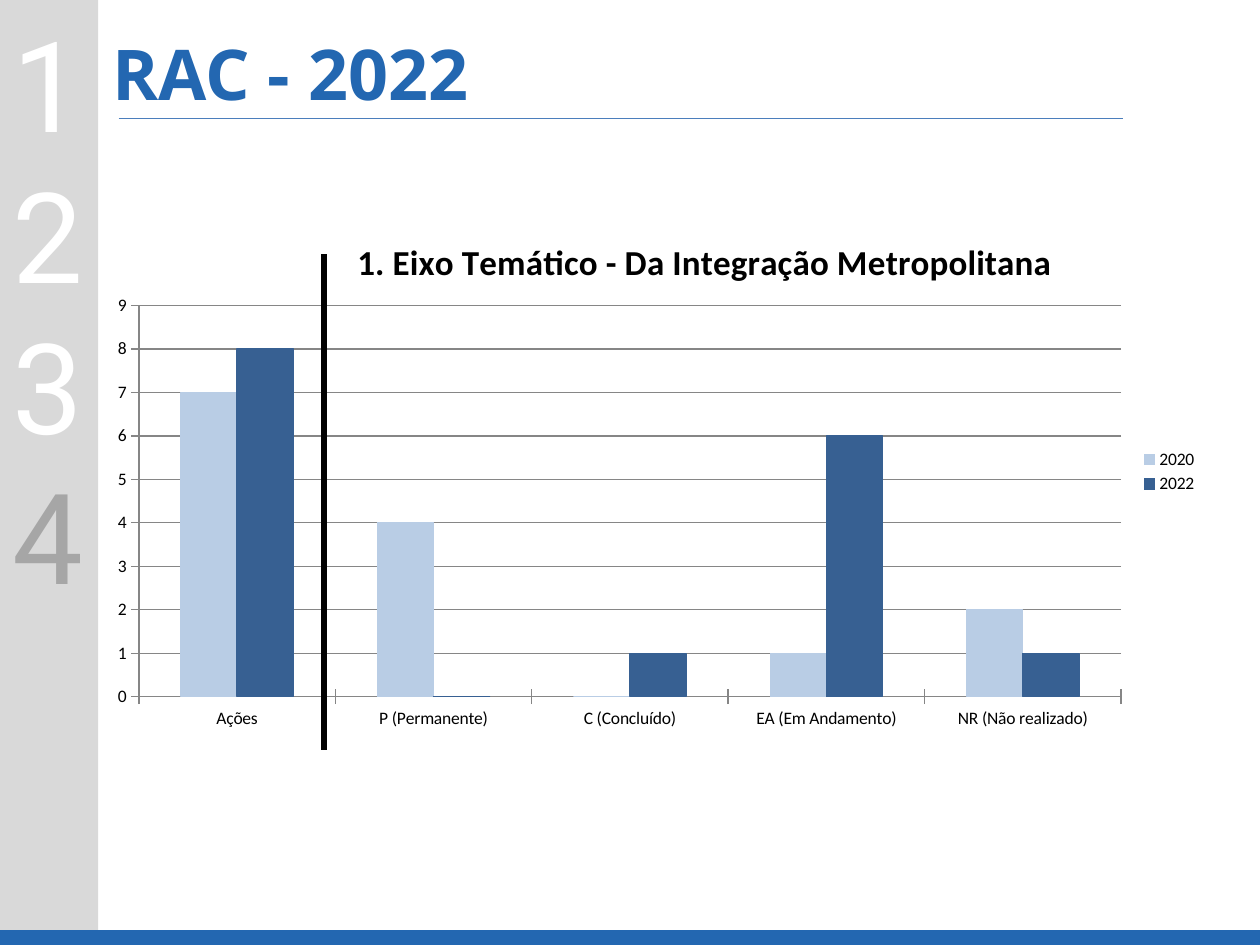
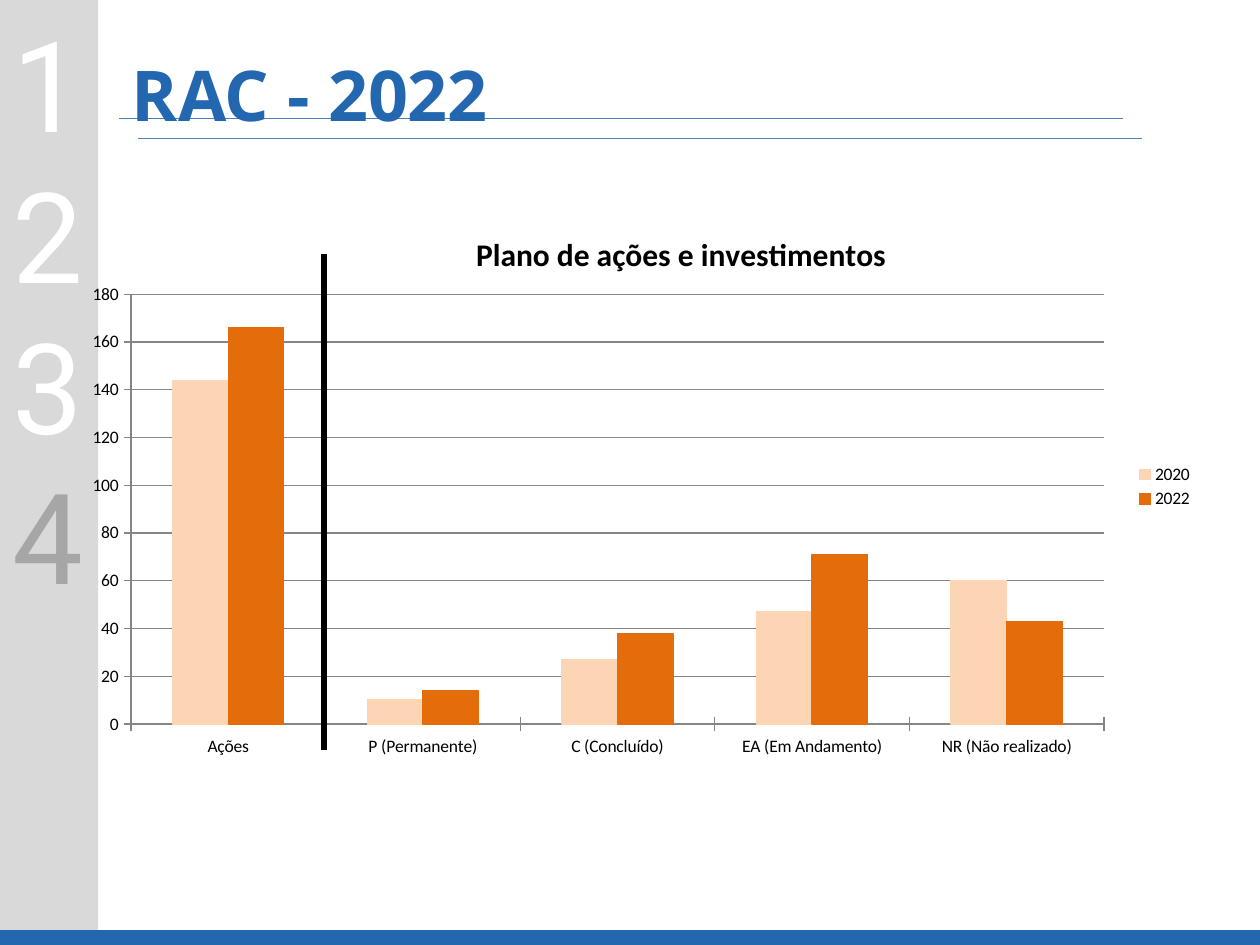
from dataclasses import dataclass

from lxml import etree
from pptx import Presentation
from pptx.chart.data import CategoryChartData
from pptx.dml.color import RGBColor
from pptx.enum.chart import XL_CHART_TYPE, XL_LEGEND_POSITION, XL_TICK_MARK
from pptx.enum.shapes import MSO_CONNECTOR, MSO_SHAPE
from pptx.enum.text import MSO_ANCHOR
from pptx.oxml.ns import qn
from pptx.util import Cm, Pt

COLUMNS = XL_CHART_TYPE.COLUMN_CLUSTERED
LEGEND_RIGHT = XL_LEGEND_POSITION.RIGHT
TICK_CROSS = XL_TICK_MARK.CROSS
STRAIGHT = MSO_CONNECTOR.STRAIGHT
RECTANGLE = MSO_SHAPE.RECTANGLE
MIDDLE, TOP = MSO_ANCHOR.MIDDLE, MSO_ANCHOR.TOP

# Content; places and sizes are in cm, layouts are fractions of the chart
HEADING = "RAC - 2022"
SECTIONS = ["1", "2", "3", "4"]
CURRENT_SECTION = "4"
STATUSES = ["Ações", "P (Permanente)", "C (Concluído)",
            "EA (Em Andamento)", "NR (Não realizado)"]
REPORTS = [
    {
        "title": "1. Eixo Temático - Da Integração Metropolitana",
        "title_size": 20,
        "years": [("2020", [7, 4, 0, 1, 2], "B9CDE5"),
                  ("2022", [8, 0, 1, 6, 1], "376092")],
        "top_value": 9, "step": 1,
        "place": (1.9, 4.11, 22.5, 10.8),
        "title_layout": {"x": 0.23, "y": 0.05},
        "plot_layout": {"x": 0.04, "y": 0.19, "w": 0.88, "h": 0.73},
        "heading_at": (2.11, 0.41),
        "extra_rule": None,
    },
    {
        "title": "Plano de ações e investimentos",
        "title_size": 18,
        "years": [("2020", [144, 10, 27, 47, 60], "FCD5B5"),
                  ("2022", [166, 14, 38, 71, 43], "E46C0A")],
        "top_value": 180, "step": 20,
        "place": (1.5, 4.11, 22.81, 11.4),
        "title_layout": {"x": 0.35, "y": 0.04},
        "plot_layout": {"x": 0.05, "y": 0.16, "w": 0.86, "h": 0.76},
        "heading_at": (2.51, 0.84),
        "extra_rule": (2.79, 2.8),
    },
]


@dataclass(frozen=True)
class Theme:
    blue: str = "2367B1"
    rule: str = "4B7EBC"
    sidebar: str = "D9D9D9"
    number: str = "FFFFFF"
    current: str = "A6A6A6"
    ink: str = "000000"
    grid: str = "868686"
    heading_font: str = "Open Sans"
    number_font: str = "Roboto"
    chart_font: str = "Calibri"
    heading_size: int = 40
    number_size: int = 72
    chart_size: int = 10
    thin: float = 0.75
    thick: float = 3


THEME = Theme()
SLIDE_W, SLIDE_H = 25.4, 19.05
FOOTER_H = 0.3
SIDEBAR_W = 1.98
NUMBER_W, NUMBER_H, NUMBER_STEP = 1.9, 3.33, 3.04
HEADING_W, HEADING_H = 20.6, 2.11
RULE_W, RULE_AT = 20.24, (2.39, 2.39)
DIVIDER_X, DIVIDER_TOP, DIVIDER_BOTTOM = 6.53, 5.13, 15.11


def rgb(code):
    return RGBColor.from_string(code)


def add_band(slide, left, top, width, height, color):
    band = slide.shapes.add_shape(RECTANGLE, Cm(left), Cm(top), Cm(width), Cm(height))
    band.shadow.inherit = False
    band.fill.solid()
    band.fill.fore_color.rgb = rgb(color)
    band.line.fill.background()


def add_line(slide, x1, y1, x2, y2, color, weight):
    line = slide.shapes.add_connector(STRAIGHT, Cm(x1), Cm(y1), Cm(x2), Cm(y2))
    line.line.color.rgb = rgb(color)
    line.line.width = Pt(weight)
    etree.SubElement(line.element.spPr, qn("a:effectLst"))


def add_rule(slide, left, top):
    add_line(slide, left, top, left + RULE_W, top, THEME.rule, THEME.thin)


def add_text(slide, text, place, font, size, color, bold=False,
             insets=(0.25, 0.13), anchor=TOP):
    box = slide.shapes.add_textbox(*map(Cm, place))
    frame = box.text_frame
    frame.word_wrap = True
    frame.vertical_anchor = anchor
    frame.margin_left = frame.margin_right = Cm(insets[0])
    frame.margin_top = frame.margin_bottom = Cm(insets[1])
    run = frame.paragraphs[0].add_run()
    run.text = text
    run.font.name = font
    run.font.size = Pt(size)
    run.font.bold = bold
    run.font.color.rgb = rgb(color)


def add_frame(slide):
    """Sidebar with section numbers, footer band and heading rule."""
    add_band(slide, 0, 0, SIDEBAR_W, SLIDE_H - FOOTER_H, THEME.sidebar)
    for i, section in enumerate(SECTIONS):
        color = THEME.current if section == CURRENT_SECTION else THEME.number
        add_text(slide, section, (0, i * NUMBER_STEP, NUMBER_W, NUMBER_H),
                 THEME.number_font, THEME.number_size, color)
    add_band(slide, 0, SLIDE_H - FOOTER_H, SLIDE_W, FOOTER_H, THEME.blue)
    add_rule(slide, *RULE_AT)


def set_layout(element, index, fractions, inner=False):
    """Place a chart part by fractions of the chart's size."""
    for old in element.findall(qn("c:layout")):
        element.remove(old)
    layout = etree.Element(qn("c:layout"))
    manual = etree.SubElement(layout, qn("c:manualLayout"))
    if inner:
        etree.SubElement(manual, qn("c:layoutTarget")).set("val", "inner")
    for axis in "xy":
        etree.SubElement(manual, qn(f"c:{axis}Mode")).set("val", "edge")
    for key, value in fractions.items():
        etree.SubElement(manual, qn(f"c:{key}")).set("val", str(value))
    element.insert(index, layout)


def style_line(line, color):
    line.color.rgb = rgb(color)
    line.width = Pt(THEME.thin)


def add_report_chart(slide, report):
    data = CategoryChartData()
    data.categories = STATUSES
    for year, counts, _ in report["years"]:
        data.add_series(year, counts)
    chart = slide.shapes.add_chart(COLUMNS, *map(Cm, report["place"]), data).chart
    chart.font.name = THEME.chart_font
    chart.font.size = Pt(THEME.chart_size)
    chart.font.color.rgb = rgb(THEME.ink)

    # Title and legend
    title = chart.chart_title
    run = title.text_frame.paragraphs[0].add_run()
    run.text = report["title"]
    run.font.name = THEME.chart_font
    run.font.size = Pt(report["title_size"])
    run.font.bold = True
    run.font.color.rgb = rgb(THEME.ink)
    chart.has_legend = True
    chart.legend.position = LEGEND_RIGHT
    chart.legend.include_in_layout = False

    # Columns
    plot = chart.plots[0]
    plot.vary_by_categories = False
    plot.gap_width = 150
    plot.overlap = 0
    for columns, (_, _, color) in zip(plot.series, report["years"]):
        columns.format.fill.solid()
        columns.format.fill.fore_color.rgb = rgb(color)
        style_line(columns.format.line, color)

    # Axes
    counts_axis = chart.value_axis
    counts_axis.minimum_scale = 0
    counts_axis.maximum_scale = report["top_value"]
    counts_axis.major_unit = report["step"]
    counts_axis.has_major_gridlines = True
    style_line(counts_axis.major_gridlines.format.line, THEME.grid)
    for axis in (chart.category_axis, counts_axis):
        axis.major_tick_mark = TICK_CROSS
        style_line(axis.format.line, THEME.grid)

    set_layout(title.element if hasattr(title, "element") else title._element,
               1, report["title_layout"])
    plot_area = chart.element.find(f"{qn('c:chart')}/{qn('c:plotArea')}")
    set_layout(plot_area, 0, report["plot_layout"], inner=True)


def add_report(deck, report):
    slide = deck.slides.add_slide(deck.slide_layouts[6])
    add_frame(slide)
    add_report_chart(slide, report)
    add_line(slide, DIVIDER_X, DIVIDER_TOP, DIVIDER_X, DIVIDER_BOTTOM,
             THEME.ink, THEME.thick)
    add_text(slide, HEADING, (*report["heading_at"], HEADING_W, HEADING_H),
             THEME.heading_font, THEME.heading_size, THEME.blue, bold=True,
             insets=(0.15, 0.08), anchor=MIDDLE)
    if report["extra_rule"]:
        add_rule(slide, *report["extra_rule"])


def main():
    deck = Presentation()
    deck.slide_width, deck.slide_height = Cm(SLIDE_W), Cm(SLIDE_H)
    for report in REPORTS:
        add_report(deck, report)
    deck.save("out.pptx")


if __name__ == "__main__":
    main()
